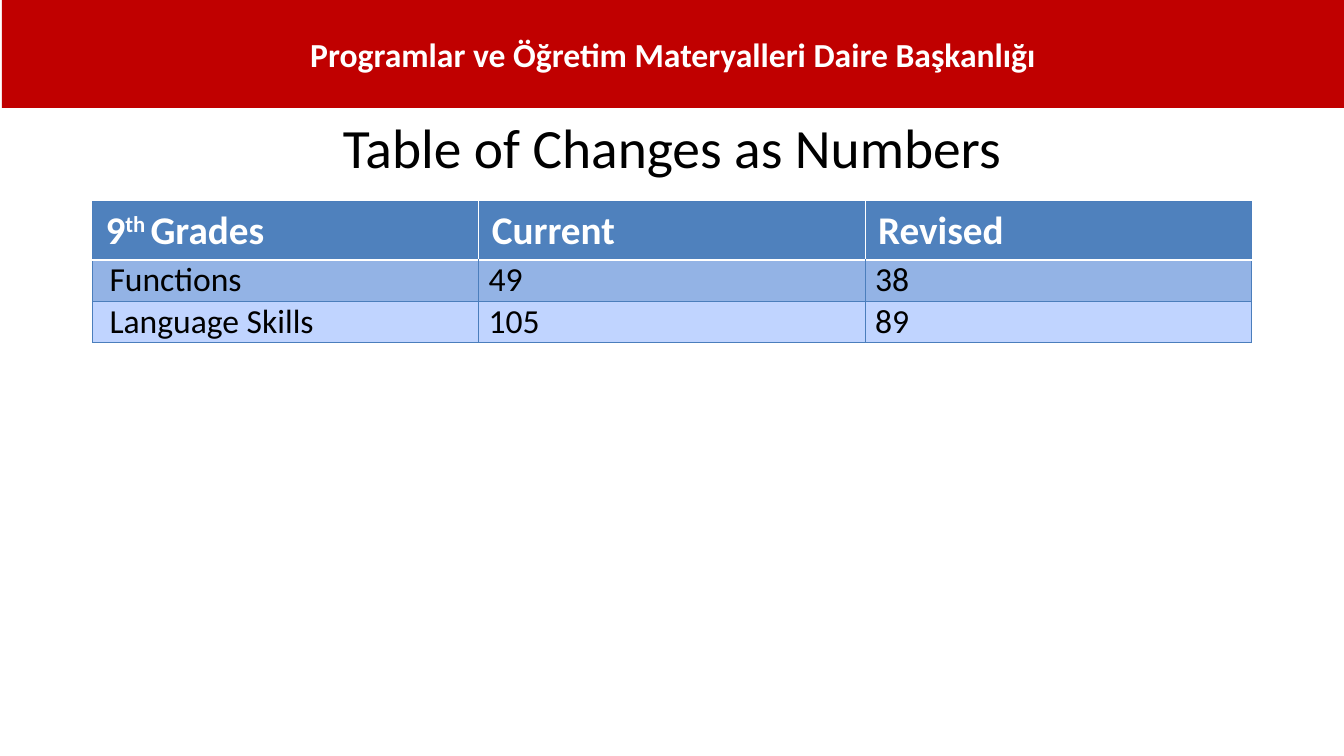
from lxml import etree
from pptx import Presentation
from pptx.dml.color import RGBColor
from pptx.enum.shapes import MSO_SHAPE
from pptx.enum.text import MSO_ANCHOR, MSO_AUTO_SIZE, PP_ALIGN
from pptx.oxml.ns import qn
from pptx.util import Cm, Pt

RECT = MSO_SHAPE.RECTANGLE
TOP, MIDDLE = MSO_ANCHOR.TOP, MSO_ANCHOR.MIDDLE
LEFT, CENTER = PP_ALIGN.LEFT, PP_ALIGN.CENTER
NO_FIT = MSO_AUTO_SIZE.NONE

BANNER = "Programlar ve Öğretim Materyalleri Daire Başkanlığı"
TITLE = "Table of Changes as Numbers"
HEADS = [("9", "^th ", "Grades"), ("Current",), ("Revised",)]
ROWS = [("Functions", "49", "38"), ("Language Skills", "105", "89")]

RED, WHITE, BLACK = "C00000", "FFFFFF", "000000"
BLUE, EDGE = "4F81BD", "4B7EBC"
BANDS = ["93B3E5", "C0D4FF"]
SIDE, WIDE = 2.33, 29.21
HEAD_H, ROW_H = 1.46, 1.04


def color(code):
    return RGBColor.from_string(code)


def write(frame, *parts, size=24, tint=BLACK, bold=False, align=LEFT):
    """Put parts in the first paragraph; a leading ^ marks superscript."""
    para = frame.paragraphs[0]
    para.alignment = align
    for part in parts:
        run = para.add_run()
        run.text = part.lstrip("^")
        font = run.font
        font.name, font.size, font.bold = "Calibri", Pt(size), bold
        font.color.rgb = color(tint)
        if part.startswith("^"):
            run._r.get_or_add_rPr().set("baseline", "30000")


def border(cell, **sides):
    """Draw the given sides, each as (colour, points), in the order L, R, T, B."""
    props = cell._tc.get_or_add_tcPr()
    for side in "LRTB":
        if side in sides:
            code, width = sides[side]
            line = etree.SubElement(props, qn("a:ln" + side), w=str(Pt(width)))
            fill = etree.SubElement(line, qn("a:solidFill"))
            etree.SubElement(fill, qn("a:srgbClr"), val=code)


def paint(item, code):
    item.fill.solid()
    item.fill.fore_color.rgb = color(code)


def pad(cell, left, right, edge):
    cell.margin_left, cell.margin_right = Cm(left), Cm(right)
    cell.margin_top = cell.margin_bottom = Cm(edge)


def add_title(slide):
    title = slide.shapes.title
    title.left, title.top = Cm(SIDE), Cm(2.72)
    title.width, title.height = Cm(WIDE), Cm(3.68)
    frame = title.text_frame
    frame.auto_size, frame.vertical_anchor = NO_FIT, TOP
    write(frame, TITLE, size=39.6, align=CENTER)


def add_grid(slide):
    count = len(HEADS)
    high = HEAD_H + ROW_H * len(ROWS)
    table = slide.shapes.add_table(len(ROWS) + 1, count, Cm(SIDE), Cm(5.08),
                                   Cm(WIDE), Cm(high)).table
    thin, thick = (EDGE, 0.75), (WHITE, 2)
    table.rows[0].height = Cm(HEAD_H)
    for col, parts in enumerate(HEADS):
        cell = table.cell(0, col)
        ends = {"L": thin} if col == 0 else {}
        if col == count - 1:
            ends["R"] = thin
        border(cell, T=thin, B=thick, **ends)
        paint(cell, BLUE)
        pad(cell, 0.33, 0.33, 0.13)
        write(cell.text_frame, *parts, size=28, tint=WHITE, bold=True)
    for row, values in enumerate(ROWS, 1):
        table.rows[row].height = Cm(ROW_H)
        for col, value in enumerate(values):
            cell = table.cell(row, col)
            border(cell, L=thin, R=thin, T=thick if row == 1 else thin, B=thin)
            paint(cell, BANDS[(row - 1) % 2])
            pad(cell, 0.43 if col == 0 else 0.25, 0.25, 0)
            write(cell.text_frame, value)


def add_banner(slide):
    bar = slide.shapes.add_shape(RECT, Cm(0.05), 0, Cm(33.82), Cm(2.72))
    bar.shadow.inherit = False
    paint(bar, RED)
    bar.line.fill.background()
    bar.text_frame.vertical_anchor = MIDDLE
    write(bar.text_frame, BANNER, tint=WHITE, bold=True, align=CENTER)


def main():
    deck = Presentation()
    deck.slide_width, deck.slide_height = Cm(33.87), Cm(19.05)
    slide = deck.slides.add_slide(deck.slide_layouts[5])
    add_title(slide)
    add_grid(slide)
    add_banner(slide)
    deck.save("out.pptx")


if __name__ == "__main__":
    main()
